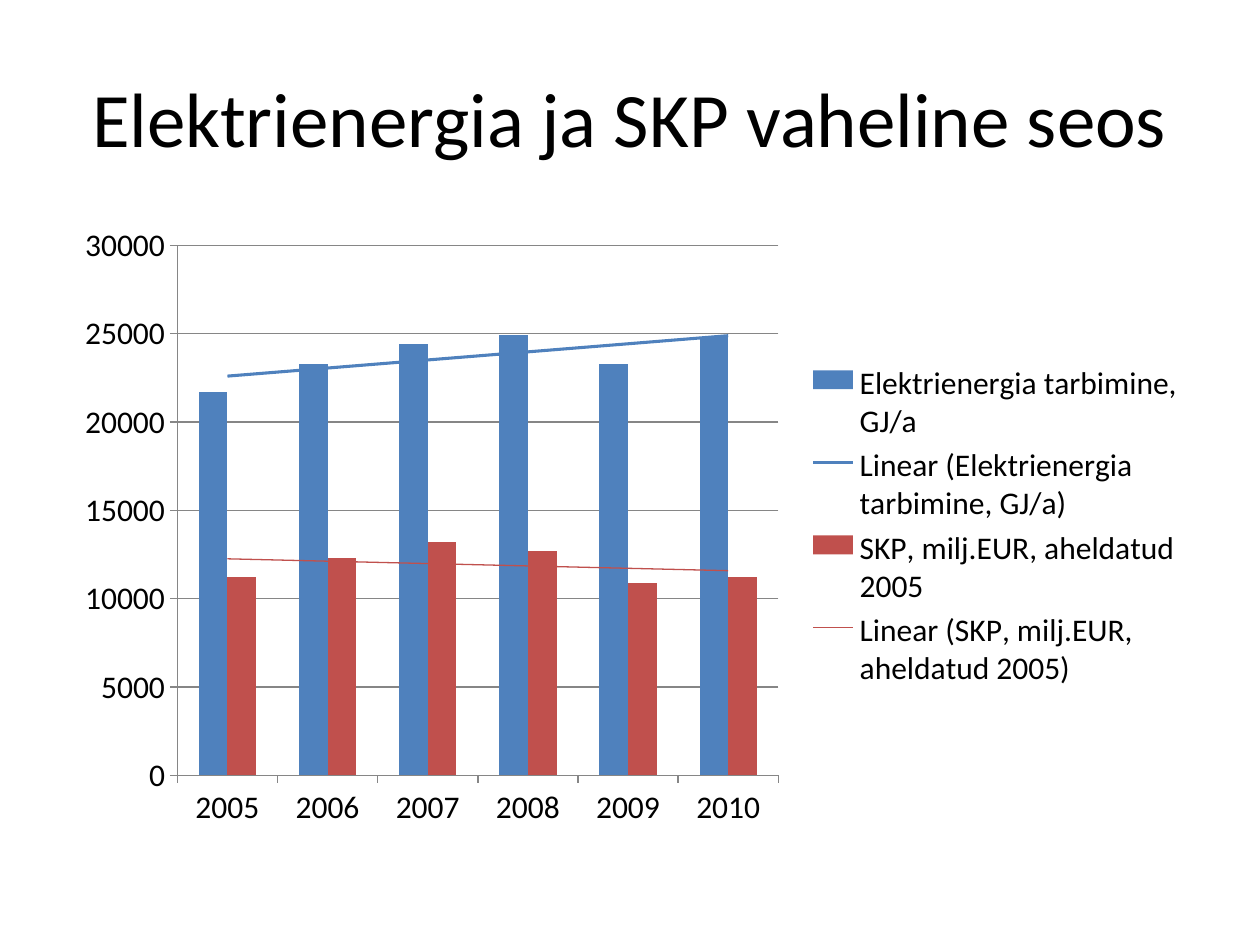
"""Build a slide with a column chart of electricity use and GDP with linear trends."""
from lxml.etree import fromstring
from pptx import Presentation
from pptx.chart.data import CategoryChartData
from pptx.dml.color import RGBColor
from pptx.enum.chart import XL_CHART_TYPE as ChartType, XL_LEGEND_POSITION as LegendPosition
from pptx.enum.chart import XL_TICK_MARK as TickMark
from pptx.enum.text import MSO_ANCHOR as Anchor, PP_ALIGN as Align
from pptx.oxml.ns import nsdecls, qn
from pptx.util import Pt

BLACK = RGBColor(0x00, 0x00, 0x00)
GRAY = RGBColor(0x86, 0x86, 0x86)
BLUE = RGBColor(0x4F, 0x81, 0xBD)
RED = RGBColor(0xC0, 0x50, 0x4D)
FONT = "Calibri"
SCALE = 914400 / 126


def px(length):
    return round(length * SCALE)


def chart_xml(tag, content):
    return fromstring(f'<c:{tag} {nsdecls("c", "a")}>{content}</c:{tag}>')


deck = Presentation()
deck.slide_width, deck.slide_height = px(1260), px(945)
page = deck.slides.add_slide(deck.slide_layouts[5])

title = page.shapes.title
title.left, title.top, title.width, title.height = px(63), px(38), px(1134), px(157)
title.text_frame.vertical_anchor = Anchor.MIDDLE
para = title.text_frame.paragraphs[0]
para.alignment = Align.CENTER
span = para.add_run()
span.text = "Elektrienergia ja SKP vaheline seos"
span.font.size = Pt(44)
span.font.name = FONT
span.font.color.rgb = BLACK

data = CategoryChartData()
data.categories = ["2005", "2006", "2007", "2008", "2009", "2010"]
data.add_series("Elektrienergia tarbimine, GJ/a", [21700, 23300, 24400, 24900, 23300, 24800])
data.add_series("SKP, milj.EUR, aheldatud 2005", [11200, 12300, 13200, 12700, 10900, 11200])
chart = page.shapes.add_chart(
    ChartType.COLUMN_CLUSTERED, px(64), px(214), px(1134), px(624), data
).chart
chart.has_title = False
chart.font.size = Pt(18)
chart.font.name = FONT
chart.font.color.rgb = BLACK

plot = chart.plots[0]
plot.gap_width = 150
plot.overlap = 0
plot.vary_by_categories = False
for series, color, width in zip(plot.series, (BLUE, RED), (1.75, 0.75)):
    series.format.fill.solid()
    series.format.fill.fore_color.rgb = color
    trend = chart_xml(
        "trendline",
        f'<c:spPr><a:ln w="{Pt(width)}"><a:solidFill><a:srgbClr val="{color}"/>'
        '</a:solidFill></a:ln></c:spPr><c:trendlineType val="linear"/>'
        '<c:dispRSqr val="0"/><c:dispEq val="0"/>',
    )
    series._element.find(qn("c:cat")).addprevious(trend)

values = chart.value_axis
values.minimum_scale, values.maximum_scale, values.major_unit = 0, 30000, 5000
values.has_major_gridlines = True
values.major_gridlines.format.line.color.rgb = GRAY
values.major_gridlines.format.line.width = Pt(0.75)
for axis in (values, chart.category_axis):
    axis.major_tick_mark = TickMark.OUTSIDE
    axis.format.line.color.rgb = GRAY
    axis.format.line.width = Pt(0.75)

chart.has_legend = True
chart.legend.position = LegendPosition.RIGHT
chart.legend.include_in_layout = False
position = chart.legend._element.find(qn("c:legendPos"))
for entry in (3, 2):
    position.addnext(chart_xml("legendEntry", f'<c:idx val="{entry}"/><c:delete val="1"/>'))

area = chart._chartSpace.chart.plotArea
for layout in area.findall(qn("c:layout")):
    area.remove(layout)
frame = "".join(
    f'<c:{name} val="{value}"/>'
    for name, value in (
        ("layoutTarget", "inner"), ("xMode", "edge"), ("yMode", "edge"),
        ("x", 0.1), ("y", 0.05), ("w", 0.53), ("h", 0.85),
    )
)
area.insert(0, chart_xml("layout", f"<c:manualLayout>{frame}</c:manualLayout>"))

deck.save("out.pptx")
